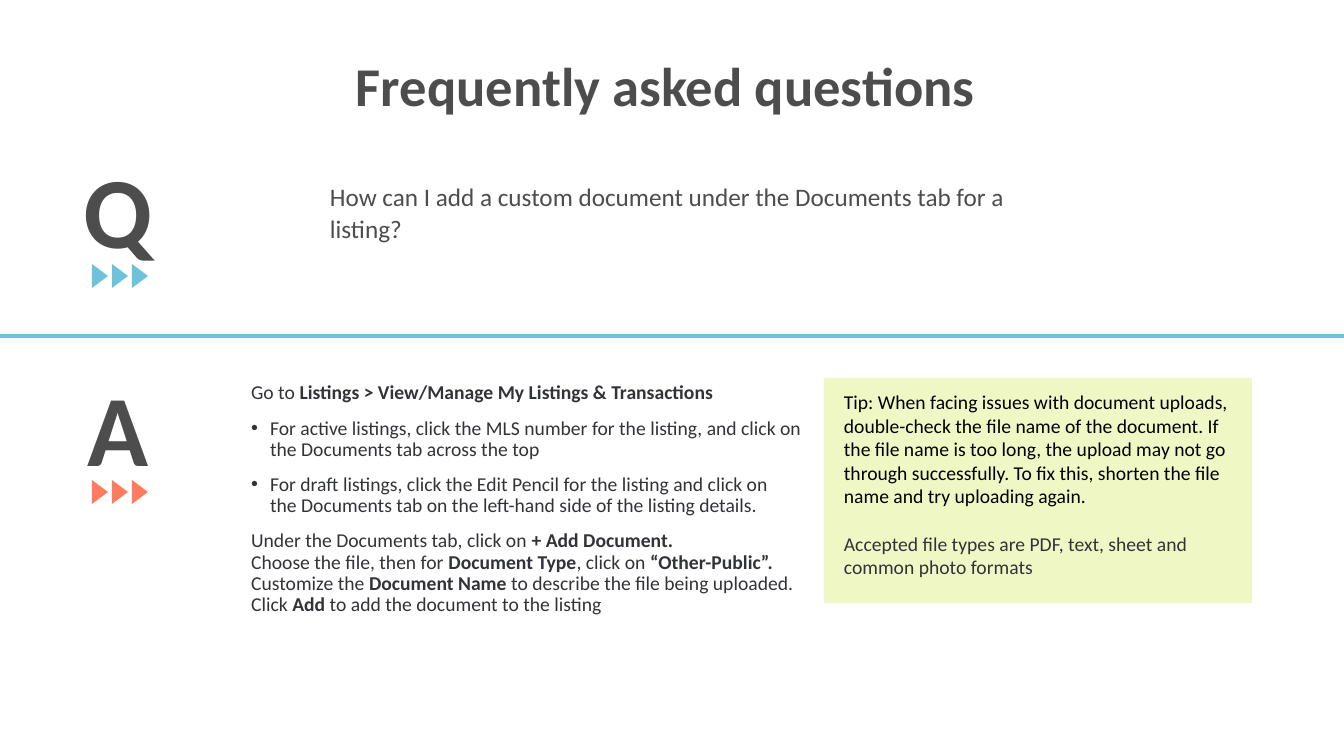
from copy import deepcopy

from lxml.etree import SubElement
from pptx import Presentation
from pptx.dml.color import RGBColor
from pptx.enum.shapes import MSO_CONNECTOR, MSO_SHAPE
from pptx.enum.text import MSO_ANCHOR, MSO_AUTO_SIZE, PP_ALIGN
from pptx.oxml.ns import qn
from pptx.util import Emu, Pt

COLORS = {"heading": "4D4D4D", "text": "323338", "tip": "000000",
          "blue": "6DC3DB", "coral": "FF7C61", "panel": "EFF7C5"}
FONT = "Calibri"
PX = 914400 / 100.8
PAGE_SIZE = (1344, 756)

TITLE = "Frequently asked questions"
QUESTION = "How can I add a custom document under the Documents tab for a listing?"

# Each paragraph: (has bullet, [(text, bold), ...])
ANSWER = [
    (False, [("Go to ", False),
             ("Listings > View/Manage My Listings & Transactions", True)]),
    (True, [("For active listings, click the MLS number for the listing, and click on\n"
             "the Documents tab across the top", False)]),
    (True, [("For draft listings, click the Edit Pencil for the listing and click on\n"
             "the Documents tab on the left-hand side of the listing details.", False)]),
    (False, [("Under the Documents tab, click on ", False), ("+ Add Document.\n", True),
             ("Choose the file, then for ", False), ("Document Type", True),
             (", click on ", False), ("“Other-Public”.\n", True),
             ("Customize the ", False), ("Document Name", True),
             (" to describe the file being uploaded.\nClick ", False), ("Add", True),
             (" to add the document to the listing", False)]),
]
TIPS = [
    ("Tip: When facing issues with document uploads, double-check the file name of "
     "the document. If the file name is too long, the upload may not go through "
     "successfully. To fix this, shorten the file name and try uploading again.", "tip"),
    ("Accepted file types are PDF, text, sheet and common photo formats", "text"),
]

# Each marker: letter, left and top of its box, centre of its arrows, arrow colour
MARKERS = [("Q", 74, 143, 276, "blue"), ("A", 78, 361, 492, "coral")]
LETTER_SIZE = (89, 132)
ARROW_SIZE = (24, 16)
ARROW_CENTERS = [100 + 20 * step for step in range(3)]
DIVIDER_Y = 336
BULLET_INDENT = 19


def px(value):
    return Emu(round(value * PX))


def rgb(name):
    return RGBColor.from_string(COLORS[name])


def place(shape, left, top, width, height):
    shape.left, shape.top = px(left), px(top)
    shape.width, shape.height = px(width), px(height)


def prepare_frame(shape):
    frame = shape.text_frame
    frame.word_wrap = True
    frame.auto_size = MSO_AUTO_SIZE.NONE
    frame.vertical_anchor = MSO_ANCHOR.TOP
    return frame


def add_box(page, left, top, width, height):
    box = page.shapes.add_textbox(px(left), px(top), px(width), px(height))
    return prepare_frame(box)


def add_spans(para, text, size, color, bold=False):
    """Add text run by run, with a formatted line break at each newline."""
    for index, line in enumerate(text.split("\n")):
        if index:
            para.add_line_break()
            para._p[-1].append(deepcopy(span._r.rPr))
        if line:
            span = para.add_run()
            span.text = line
            span.font.name, span.font.size = FONT, Pt(size)
            span.font.bold, span.font.color.rgb = bold, rgb(color)


def set_bullet(para, has_bullet):
    props = para._p.get_or_add_pPr()
    indent = px(BULLET_INDENT) if has_bullet else 0
    props.set("marL", str(indent))
    props.set("indent", str(-indent))
    if has_bullet:
        SubElement(props, qn("a:buFont")).set("typeface", "Arial")
        SubElement(props, qn("a:buChar")).set("char", "•")
    else:
        SubElement(props, qn("a:buNone"))


def add_filled(page, kind, left, top, width, height, color):
    shape = page.shapes.add_shape(kind, px(left), px(top), px(width), px(height))
    shape.shadow.inherit = False
    shape.fill.solid()
    shape.fill.fore_color.rgb = rgb(color)
    shape.line.fill.background()
    return shape


def add_title(page):
    title = page.shapes.title
    place(title, 73, 54, 1185, 78)
    para = prepare_frame(title).paragraphs[0]
    para.alignment, para.line_spacing, para.space_before = PP_ALIGN.CENTER, 0.9, Pt(0)
    add_spans(para, TITLE, 39, "heading", True)


def add_answer(page):
    body = page.placeholders[1]
    place(body, 241, 378, 573, 216)
    frame = prepare_frame(body)
    for index, (has_bullet, spans) in enumerate(ANSWER):
        para = frame.add_paragraph() if index else frame.paragraphs[0]
        set_bullet(para, has_bullet)
        para.line_spacing, para.space_before = 0.9, Pt(10 if index else 0)
        for text, bold in spans:
            add_spans(para, text, 14, "text", bold)


def add_divider(page):
    line = page.shapes.add_connector(MSO_CONNECTOR.STRAIGHT, 0, px(DIVIDER_Y),
                                     px(PAGE_SIZE[0]), px(DIVIDER_Y))
    line.line.color.rgb, line.line.width = rgb("blue"), Pt(2.25)
    SubElement(line._element.spPr, qn("a:effectLst"))


def add_marker(page, letter, left, top, arrow_y, color):
    para = add_box(page, left, top, *LETTER_SIZE).paragraphs[0]
    add_spans(para, letter, 72, "heading", True)
    width, height = ARROW_SIZE
    for center in ARROW_CENTERS:
        arrow = add_filled(page, MSO_SHAPE.ISOSCELES_TRIANGLE, center - width / 2,
                           arrow_y - height / 2, width, height, color)
        arrow.rotation = 90


def add_tips(page):
    add_filled(page, MSO_SHAPE.RECTANGLE, 824, 378, 428, 225, "panel")
    frame = add_box(page, 834, 385, 408, 201)
    for index, (text, color) in enumerate(TIPS):
        para = frame.add_paragraph() if index else frame.paragraphs[0]
        para.space_before = Pt(17 if index else 0)
        add_spans(para, text, 14, color)


def main():
    deck = Presentation()
    deck.slide_width, deck.slide_height = map(px, PAGE_SIZE)
    page = deck.slides.add_slide(deck.slide_layouts[1])
    add_title(page)
    add_answer(page)
    add_divider(page)
    question = add_box(page, 320, 174, 732, 104).paragraphs[0]
    question.line_spacing = 1.07
    add_spans(question, QUESTION, 18, "heading")
    for marker in MARKERS:
        add_marker(page, *marker)
    add_tips(page)
    deck.save("out.pptx")


if __name__ == "__main__":
    main()
